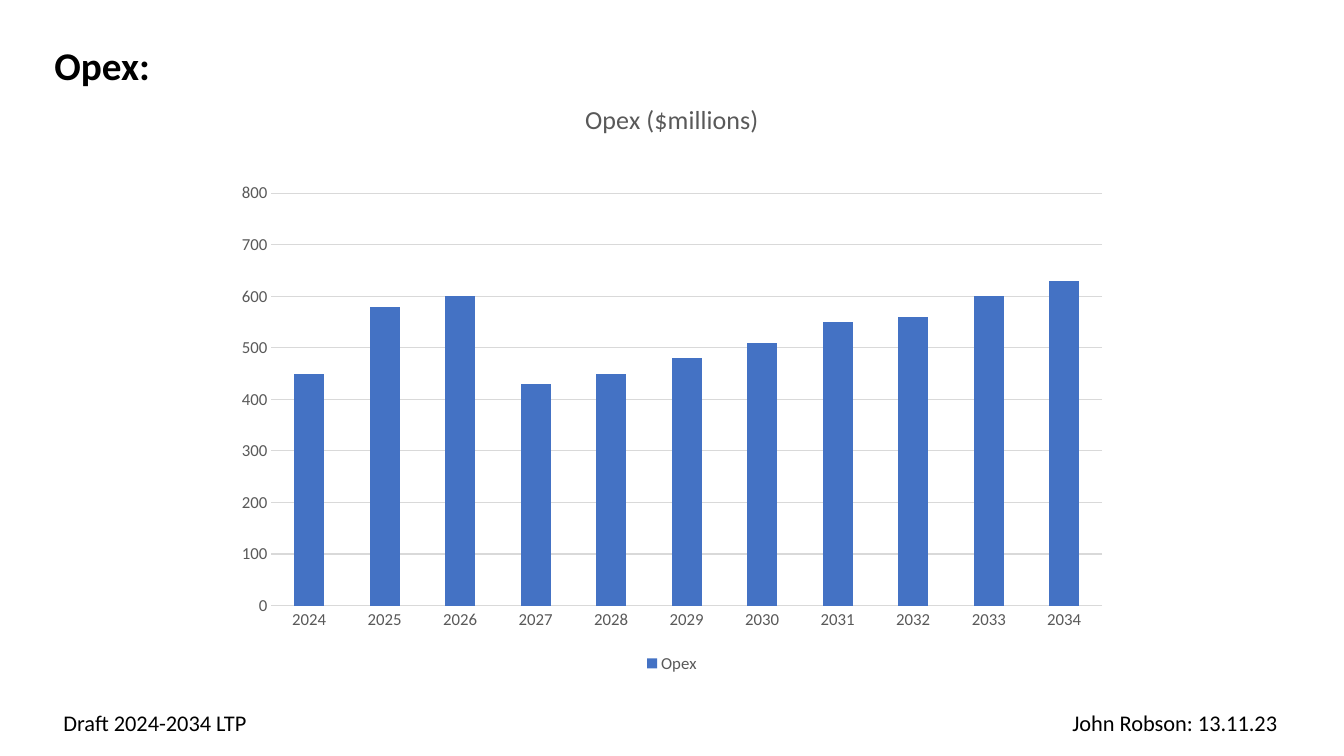
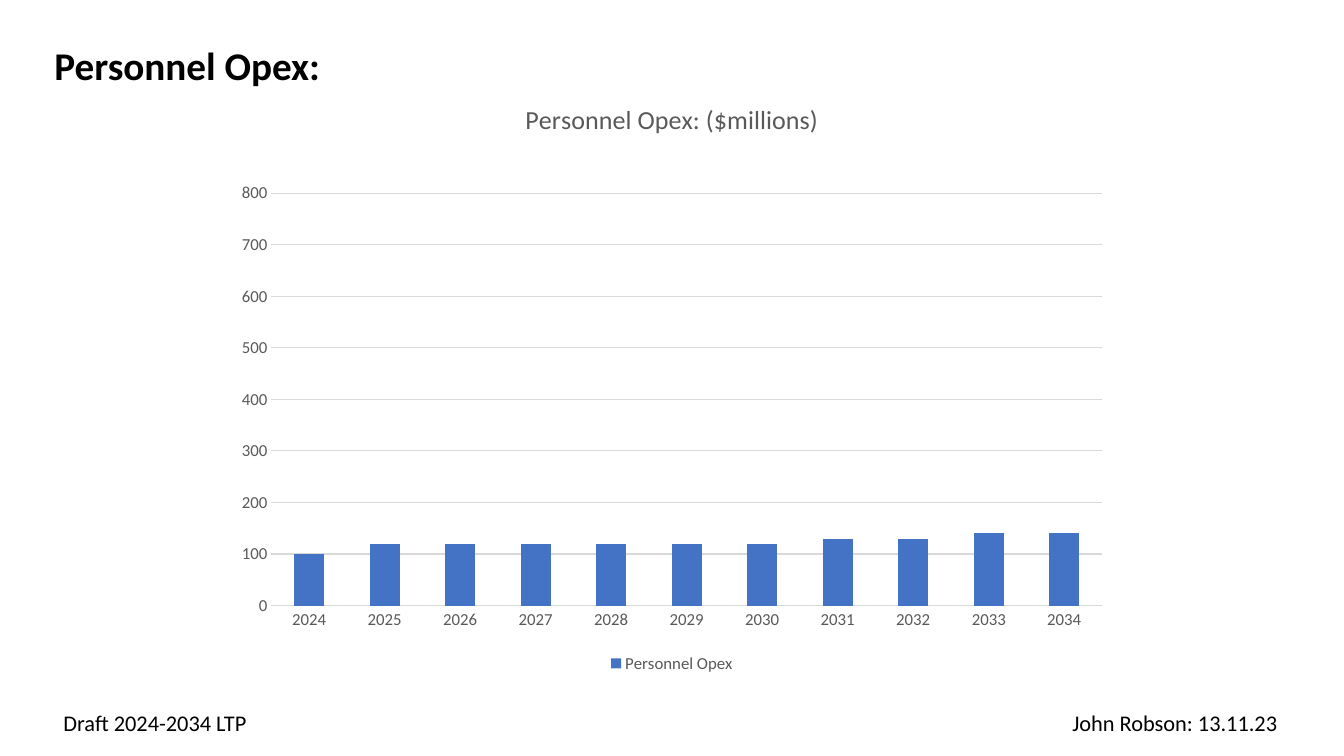
from pptx import Presentation
from pptx.chart.data import CategoryChartData
from pptx.dml.color import RGBColor
from pptx.enum.chart import XL_CHART_TYPE, XL_LEGEND_POSITION, XL_TICK_MARK
from pptx.enum.text import MSO_ANCHOR, MSO_AUTO_SIZE, PP_ALIGN
from pptx.oxml import parse_xml
from pptx.oxml.ns import nsdecls, qn
from pptx.util import Pt

STACKED = XL_CHART_TYPE.COLUMN_STACKED
BOTTOM = XL_LEGEND_POSITION.BOTTOM
NO_TICK = XL_TICK_MARK.NONE
TOP, LEFT = MSO_ANCHOR.TOP, PP_ALIGN.LEFT
NO_FIT = MSO_AUTO_SIZE.NONE

# Content
YEARS = [str(year) for year in range(2024, 2035)]
PAGES = [
    {"title": "Opex:", "head": "Opex ($millions)", "name": "Opex",
     "vals": [450, 580, 600, 430, 450, 480, 510, 550, 560, 600, 630]},
    {"title": "Personnel Opex:", "head": "Personnel Opex: ($millions)",
     "name": "Personnel Opex",
     "vals": [100, 120, 120, 120, 120, 120, 120, 130, 130, 140, 140]},
]
FOOTS = [("Draft 2024-2034 LTP", (38.2, 503.3, 147.6, 26.6)),
         ("John Robson: 13.11.23", (758.9, 503.3, 162.7, 26.6))]

# Shared style
FONT = "Calibri"
BLACK, GREY, RULE, BLUE = "000000", "595959", "D9D9D9", "4472C4"
WIDE, HIGH = 960, 540
TITLE_BOX = (31.7, 25.9, 600, 41)
CHART_BOX = (160, 56.9, 640, 427)
PLOT = {"x": 0.053, "y": 0.19, "w": 0.927, "h": 0.69}  # share of chart


def color(code):
    return RGBColor.from_string(code)


def style(font, size, code, bold=False):
    font.name, font.size, font.bold = FONT, Pt(size), bold
    font.color.rgb = color(code)


def write(frame, text, size=16, code=BLACK, bold=False, align=None):
    para = frame.paragraphs[0]
    para.alignment = align
    run = para.add_run()
    run.text = text
    style(run.font, size, code, bold)


def rule(line):
    line.color.rgb = color(RULE)
    line.width = Pt(0.75)


def place(shape, box):
    shape.left, shape.top, shape.width, shape.height = map(Pt, box)


def add_title(slide, text):
    title = slide.shapes.title
    place(title, TITLE_BOX)
    frame = title.text_frame
    frame.auto_size, frame.vertical_anchor = NO_FIT, TOP
    write(frame, text, size=28, bold=True, align=LEFT)


def add_foot(slide, text, box):
    frame = slide.shapes.add_textbox(*map(Pt, box)).text_frame
    frame.word_wrap = False
    write(frame, text, align=LEFT)


def set_plot(chart):
    area = chart.plots[0]._element.getparent()
    for old in area.findall(qn("c:layout")):
        area.remove(old)
    sizes = "".join(f'<c:{key} val="{val}"/>' for key, val in PLOT.items())
    area.insert(0, parse_xml(
        f'<c:layout {nsdecls("c")}><c:manualLayout>'
        '<c:layoutTarget val="inner"/><c:xMode val="edge"/>'
        f'<c:yMode val="edge"/>{sizes}</c:manualLayout></c:layout>'))


def add_bars(slide, page):
    data = CategoryChartData()
    data.categories = YEARS
    data.add_series(page["name"], page["vals"])
    chart = slide.shapes.add_chart(STACKED, *map(Pt, CHART_BOX), data).chart
    style(chart.font, 10, BLACK)
    chart.has_title = True
    write(chart.chart_title.text_frame, page["head"], size=18.6, code=GREY)

    # Bars
    plot = chart.plots[0]
    plot.gap_width, plot.overlap = 150, 100
    plot.vary_by_categories = False
    fill = plot.series[0].format.fill
    fill.solid()
    fill.fore_color.rgb = color(BLUE)

    # Axes
    cat, val = chart.category_axis, chart.value_axis
    for axis in (cat, val):
        axis.major_tick_mark = axis.minor_tick_mark = NO_TICK
        style(axis.tick_labels.font, 12, GREY)
    rule(cat.format.line)
    val.format.line.fill.background()
    val.minimum_scale, val.maximum_scale, val.major_unit = 0, 800, 100
    val.has_major_gridlines = True
    rule(val.major_gridlines.format.line)

    # Legend
    chart.has_legend = True
    chart.legend.position = BOTTOM
    chart.legend.include_in_layout = False
    style(chart.legend.font, 12, GREY)
    set_plot(chart)


def main():
    deck = Presentation()
    deck.slide_width, deck.slide_height = Pt(WIDE), Pt(HIGH)
    for page in PAGES:
        slide = deck.slides.add_slide(deck.slide_layouts[5])
        add_title(slide, page["title"])
        for text, box in FOOTS:
            add_foot(slide, text, box)
        add_bars(slide, page)
    deck.save("out.pptx")


if __name__ == "__main__":
    main()
